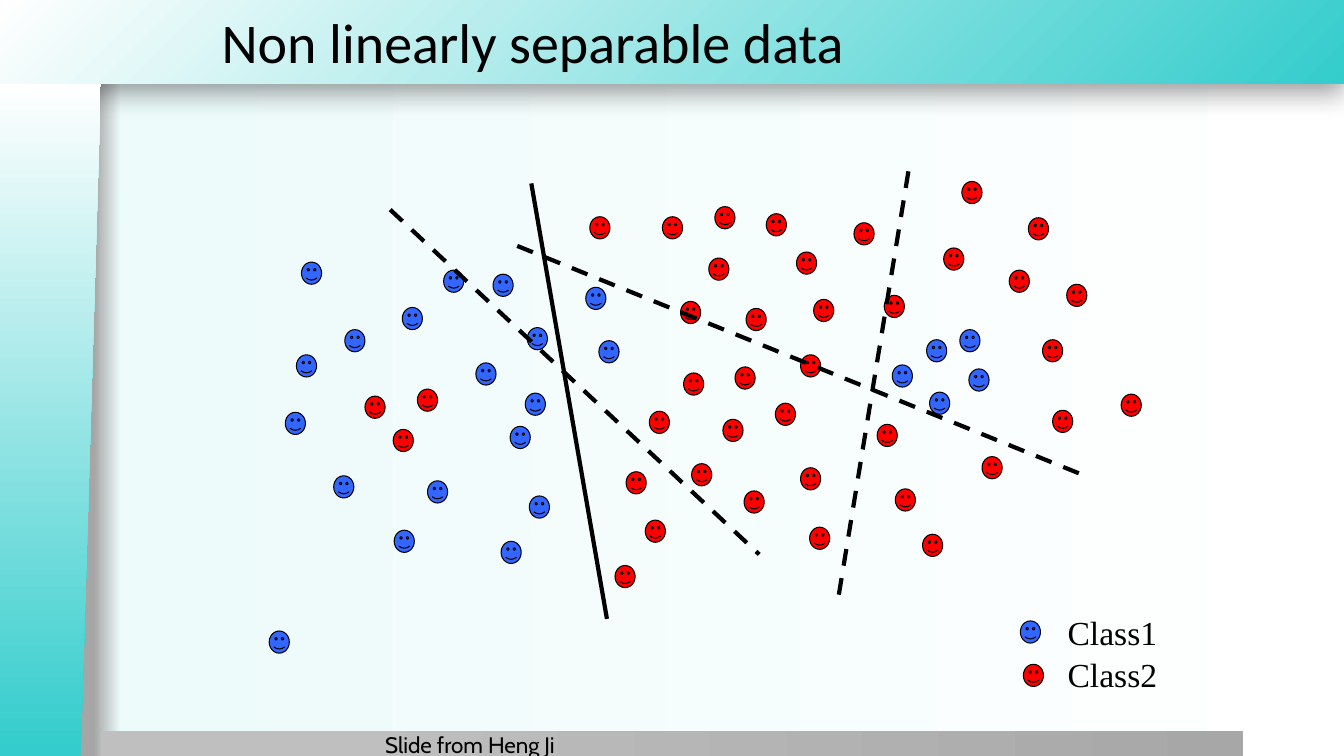
from dataclasses import dataclass

from lxml import etree
from pptx import Presentation
from pptx.dml.color import RGBColor
from pptx.enum.dml import MSO_LINE
from pptx.enum.shapes import MSO_CONNECTOR, MSO_SHAPE
from pptx.enum.text import MSO_ANCHOR, MSO_AUTO_SIZE
from pptx.oxml.ns import qn
from pptx.util import Cm, Pt

RECTANGLE = MSO_SHAPE.RECTANGLE
SLANTED_PANEL = MSO_SHAPE.FLOWCHART_MANUAL_INPUT
SMILEY = MSO_SHAPE.SMILEY_FACE
STRAIGHT = MSO_CONNECTOR.STRAIGHT
DASH = MSO_LINE.DASH
MIDDLE, TOP = MSO_ANCHOR.MIDDLE, MSO_ANCHOR.TOP
GROW = MSO_AUTO_SIZE.SHAPE_TO_FIT_TEXT
CM_PER_INCH = 2.54


@dataclass(frozen=True)
class Theme:
    """Colours, fonts and type sizes of the slide."""
    ink: str = "000000"
    class1: str = "3366FF"
    class2: str = "FF0000"
    backdrop: tuple = ((7, "A6A6A6"), (9, "EDFBFB"), (100, "FFFFFF"))
    banner: tuple = ((0, "34CCCC"), (100, "FFFFFF"))
    panel: tuple = ((1, "34CCCC"), (100, "FFFFFF"))
    footer: tuple = ((20, "BFBFBF"), (100, "A7A7A7"))
    title_type: tuple = ("Calibri", 40)
    legend_type: tuple = ("Times New Roman", 24)
    credit_type: tuple = ("Cabin", 16)


@dataclass(frozen=True)
class Box:
    """A region measured in inches from the slide's top left corner."""
    left: float
    top: float
    width: float
    height: float

    def point(self, x, y):
        """Return an offset inside the box as slide lengths."""
        return length(self.left + x), length(self.top + y)

    def frame(self):
        """Return left, top, width and height as slide lengths."""
        return (*self.point(0, 0), length(self.width), length(self.height))


THEME = Theme()
FACE_SIZE = (0.2, 0.22)

CLASS1_POINTS = [
    (1.99, 2.05), (2.4, 1.68), (2.89, 1.72), (1.31, 3.72), (0.94, 2.52), (3.23, 2.25),
    (1.91, 4.26), (0.99, 1.6), (1.42, 2.27), (0.83, 3.09), (3.21, 2.9), (2.97, 4.37),
    (3.06, 3.23), (3.94, 2.38), (3.25, 3.92), (2.24, 3.77), (2.72, 2.6), (0.67, 5.26),
    (7.19, 2.37), (7.22, 2.89), (7.61, 2.66), (7.52, 2.27), (6.85, 2.62), (3.81, 1.85),
]
CLASS2_POINTS = [
    (4.44, 3.08), (4.57, 1.15), (5.03, 1.56), (5.09, 1.05), (5.6, 1.12), (4.78, 2.7),
    (4.75, 1.99), (7.36, 1.46), (5.29, 2.64), (5.94, 2.52), (7.54, 0.8), (5.4, 2.06),
    (6.07, 1.97), (5.17, 3.16), (5.69, 3), (8.34, 2.37), (6.77, 1.93), (8.01, 1.68),
    (6.7, 3.21), (8.2, 1.16), (5.9, 1.5), (4.86, 3.6), (4.4, 4.16), (4.1, 4.61),
    (3.85, 1.15), (2.14, 2.86), (1.62, 2.93), (5.94, 3.64), (6.88, 3.85), (7.74, 3.53),
    (8.44, 3.07), (8.58, 1.82), (9.12, 2.91), (1.9, 3.26), (6.47, 1.21), (5.38, 3.87),
    (6.03, 4.23), (7.15, 4.3), (4.21, 3.68),
]
SOLID_BOUNDARY = ((3.27, 0.82), (4.02, 5.14))
DASHED_BOUNDARIES = [
    ((1.87, 1.08), (5.53, 4.5)),
    ((7.01, 0.7), (6.31, 4.96)),
    ((3.13, 1.44), (8.81, 3.74)),
]


def length(inches):
    """Convert inches to a slide length."""
    return Cm(inches * CM_PER_INCH)


def set_gradient(fill, owner, stops, from_corner=False):
    """Fill with stops, left to right or outward from the bottom right corner."""
    fill.gradient()
    gradient = owner.find(".//" + qn("a:gradFill"))
    gradient.clear()
    gradient.set("rotWithShape", "1")
    stop_list = etree.SubElement(gradient, qn("a:gsLst"))
    for percent, colour in stops:
        stop = etree.SubElement(stop_list, qn("a:gs"), pos=str(percent * 1000))
        etree.SubElement(stop, qn("a:srgbClr"), val=colour)
    if from_corner:
        spread = etree.SubElement(gradient, qn("a:path"))
        spread.set("path", "circle")
        etree.SubElement(spread, qn("a:fillToRect"), l="100000", t="100000")
    else:
        etree.SubElement(gradient, qn("a:lin"), ang="0", scaled="0")


def add_band(slide, box, kind, stops, from_corner=False):
    """Add a borderless gradient shape."""
    band = slide.shapes.add_shape(kind, *box.frame())
    band.shadow.inherit = False
    band.line.fill.background()
    set_gradient(band.fill, band.element, stops, from_corner)
    return band


def add_text(shapes, box, text, typeface, margins=(0.1, 0.05), anchor=TOP):
    """Add one line of text and return its frame."""
    frame = shapes.add_textbox(*box.frame()).text_frame
    frame.word_wrap = True
    frame.vertical_anchor = anchor
    frame.margin_left = frame.margin_right = length(margins[0])
    frame.margin_top = frame.margin_bottom = length(margins[1])
    run = frame.paragraphs[0].add_run()
    run.text = text
    run.font.name, size = typeface
    run.font.size = Pt(size)
    run.font.color.rgb = RGBColor.from_string(THEME.ink)
    return frame


def add_face(shapes, box, position, colour):
    """Add a smiley marker at an offset inside the box."""
    face = shapes.add_shape(SMILEY, *box.point(*position), *map(length, FACE_SIZE))
    face.shadow.inherit = False
    face.adjustments[0] = 0.047
    face.fill.solid()
    face.fill.fore_color.rgb = RGBColor.from_string(colour)
    face.line.color.rgb = RGBColor.from_string(THEME.ink)
    face.line.width = Pt(0.75)


def add_boundary(shapes, box, ends, dash=None):
    """Add a decision boundary between two offsets inside the box."""
    start, end = ends
    boundary = shapes.add_connector(STRAIGHT, *box.point(*start), *box.point(*end))
    boundary.line.color.rgb = RGBColor.from_string(THEME.ink)
    boundary.line.width = Pt(3)
    if dash is not None:
        boundary.line.dash_style = dash
    etree.SubElement(boundary.element.spPr, qn("a:effectLst"))


def draw_backdrop(slide, box):
    """Draw the background, title banner, footer bar and slanted side panel."""
    set_gradient(slide.background.fill, slide.element, THEME.backdrop)
    banner_box = Box(box.left, box.top, box.width, 0.83)
    banner = add_band(slide, banner_box, RECTANGLE, THEME.banner, from_corner=True)
    effects = banner.element.spPr.find(qn("a:effectLst"))
    shadow = etree.SubElement(effects, qn("a:outerShdw"), blurRad=str(Pt(20)),
                              dist=str(Pt(6)), dir="5400000", algn="t", rotWithShape="0")
    shade = etree.SubElement(shadow, qn("a:srgbClr"), val=THEME.ink)
    etree.SubElement(shade, qn("a:alpha"), val="40000")
    add_band(slide, Box(box.left + 1, box.top + 7.25, 11.33, 0.26), RECTANGLE, THEME.footer)
    panel_box = Box(box.left - 2.84, box.top + 3.67, 6.68, 1)
    panel = add_band(slide, panel_box, SLANTED_PANEL, THEME.panel)
    panel.rotation = 270
    panel.element.spPr.find(qn("a:xfrm")).set("flipV", "1")


def draw_scatter(slide, box):
    """Draw both classes of points and the candidate boundaries."""
    shapes = slide.shapes.add_group_shape().shapes
    for points, colour in ((CLASS1_POINTS, THEME.class1), (CLASS2_POINTS, THEME.class2)):
        for position in points:
            add_face(shapes, box, position, colour)
    add_boundary(shapes, box, SOLID_BOUNDARY)
    for ends in DASHED_BOUNDARIES:
        add_boundary(shapes, box, ends, DASH)


def draw_legend(slide, box):
    """Draw the key to the two classes."""
    shapes = slide.shapes.add_group_shape().shapes
    entries = (("Class1", THEME.class1, 0), ("Class2", THEME.class2, 0.03))
    for row, (label, colour, shift) in enumerate(entries):
        label_box = Box(box.left + 0.37, box.top + row * 0.42, 1.18, 0.5)
        add_text(shapes, label_box, label, THEME.legend_type).auto_size = GROW
        add_face(shapes, box, (shift, 0.14 + row * 0.43), colour)


def main():
    """Build and save the slide."""
    deck = Presentation()
    deck.slide_width, deck.slide_height = length(13.33), length(7.5)
    slide = deck.slides.add_slide(deck.slide_layouts[6])
    draw_backdrop(slide, Box(0, 0, 13.33, 7.5))
    draw_scatter(slide, Box(2, 1, 9.5, 5.5))
    add_text(slide.shapes, Box(2.1, -0.03, 9.53, 0.88), "Non linearly separable data",
             THEME.title_type, anchor=MIDDLE)
    draw_legend(slide, Box(10.12, 6.02, 1.55, 0.92))
    add_text(slide.shapes, Box(3.82, 7.25, 1.79, 0.22), "Slide from Heng Ji",
             THEME.credit_type, margins=(0, 0))
    deck.save("out.pptx")


if __name__ == "__main__":
    main()
